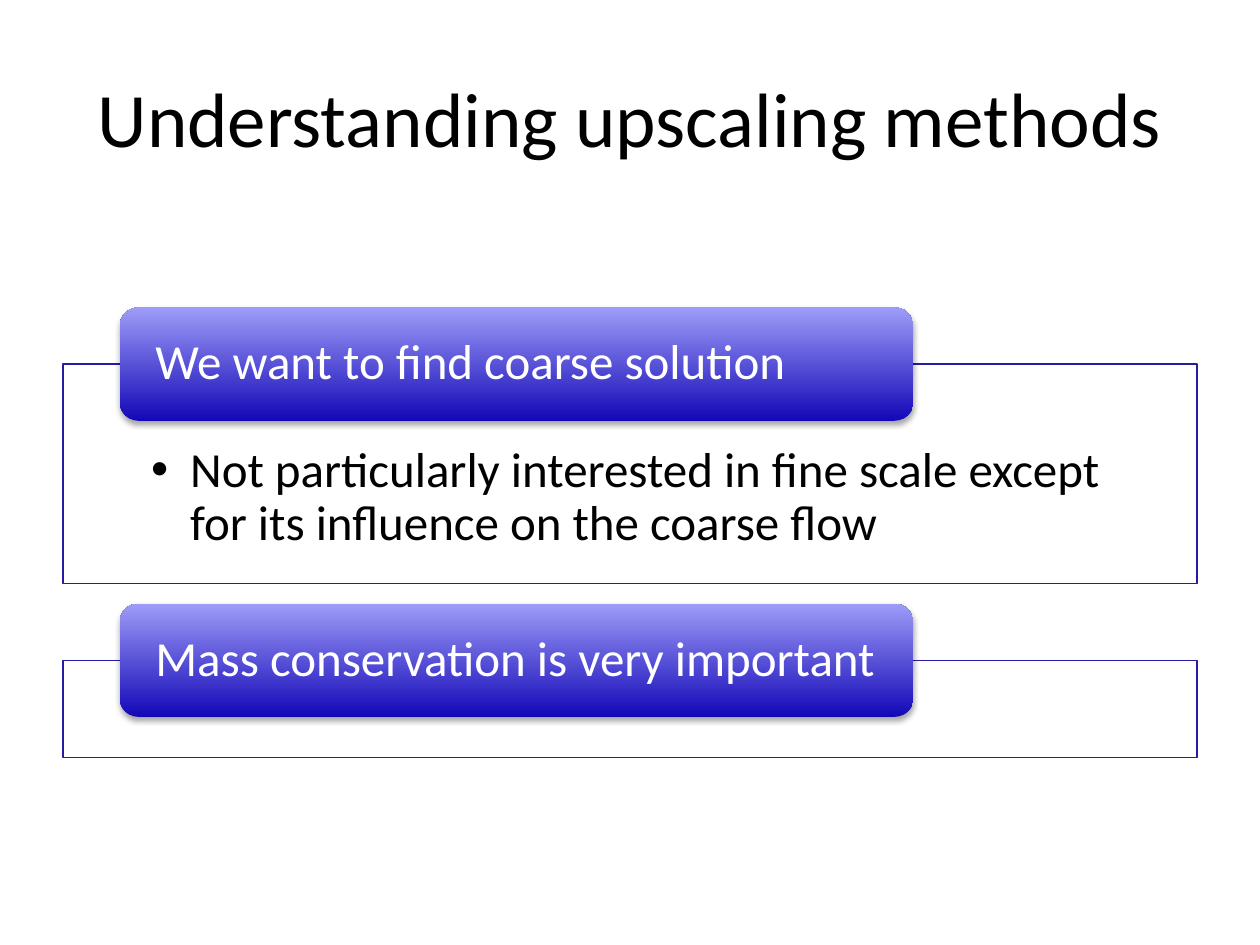
from lxml import etree
from pptx import Presentation
from pptx import util as u
from pptx.dml.color import RGBColor
from pptx.enum import shapes, text
from pptx.oxml import ns

FONT = "Calibri"
BLACK = RGBColor(0x00, 0x00, 0x00)
WHITE = RGBColor(0xFF, 0xFF, 0xFF)
OUTLINE = RGBColor(0x25, 0x1C, 0xA3)
DEEP_BLUE = RGBColor(0x13, 0x08, 0xB7)
PALE_BLUE = RGBColor(0x9E, 0x9C, 0xF8)

PANEL_LEFT, PANEL_WIDTH = 0.5, 9
HEADER_LEFT, HEADER_WIDTH, HEADER_HEIGHT = 0.95, 6.3, 0.9
SECTIONS = [
    (2.89, 1.74, "We want to find coarse solution",
     "Not particularly interested in fine scale except for its influence on the coarse flow"),
    (5.24, 0.77, "Mass conservation is very important", None),
]


def add_child(parent, tag, **attributes):
    return etree.SubElement(parent, ns.qn(tag), attributes)


def write_text(box, words, size=28, color=BLACK, align=text.PP_ALIGN.LEFT,
               anchor=text.MSO_ANCHOR.MIDDLE, insets=(0.1, 0.05, 0.1, 0.05),
               spacing=None, bullet_indent=None):
    frame = box.text_frame
    frame.word_wrap = True
    frame.vertical_anchor = anchor
    sides = ("margin_left", "margin_top", "margin_right", "margin_bottom")
    for side, inset in zip(sides, insets):
        setattr(frame, side, u.Inches(inset))
    para = frame.paragraphs[0]
    para.alignment = align
    if spacing:
        para.line_spacing = spacing
    if bullet_indent:
        properties = para._p.get_or_add_pPr()
        properties.set("marL", str(u.Inches(bullet_indent)))
        properties.set("indent", str(-u.Inches(bullet_indent)))
        add_child(properties, "a:buFont", typeface="Arial")
        add_child(properties, "a:buChar", char="•")
    span = para.add_run()
    span.text = words
    span.font.name = FONT
    span.font.size = u.Pt(size)
    span.font.color.rgb = color


def add_box(page, kind, left, top, width, height):
    box = page.shapes.add_shape(kind, u.Inches(left), u.Inches(top),
                                u.Inches(width), u.Inches(height))
    box.shadow.inherit = False
    return box


def add_title(page, words):
    box = page.shapes.add_textbox(u.Inches(0.5), u.Inches(0.3), u.Inches(9), u.Inches(1.25))
    write_text(box, words, size=44, align=text.PP_ALIGN.CENTER)


def add_panel(page, top, height, words):
    panel = add_box(page, shapes.MSO_SHAPE.RECTANGLE, PANEL_LEFT, top, PANEL_WIDTH, height)
    panel.fill.solid()
    panel.fill.fore_color.rgb = WHITE
    color = panel._element.spPr.find(ns.qn("a:solidFill"))[0]
    add_child(color, "a:alpha", val="90000")
    panel.line.color.rgb = OUTLINE
    panel.line.width = u.Pt(0.75)
    if words:
        write_text(panel, words, anchor=text.MSO_ANCHOR.TOP,
                   insets=(0.7, 0.64, 0.7, 0.22), spacing=0.9, bullet_indent=0.31)


def add_header(page, top, words):
    header = add_box(page, shapes.MSO_SHAPE.ROUNDED_RECTANGLE,
                     HEADER_LEFT, top, HEADER_WIDTH, HEADER_HEIGHT)
    header.fill.gradient()
    header.fill.gradient_angle = 90
    for stop, color, position in zip(header.fill.gradient_stops, (DEEP_BLUE, PALE_BLUE), (0, 1)):
        stop.color.rgb = color
        stop.position = position
    header.line.fill.background()
    effects = header._element.spPr.find(ns.qn("a:effectLst"))
    shadow = add_child(effects, "a:outerShdw", blurRad=str(u.Pt(3.1)), dist=str(u.Pt(1.8)),
                       dir="5400000", rotWithShape="0")
    color = add_child(shadow, "a:srgbClr", val=str(BLACK))
    add_child(color, "a:alpha", val="35000")
    write_text(header, words, color=WHITE, insets=(0.24, 0, 0.24, 0), spacing=0.9)


def main():
    deck = Presentation()
    deck.slide_width, deck.slide_height = u.Inches(10), u.Inches(7.5)
    page = deck.slides.add_slide(deck.slide_layouts[6])
    add_title(page, "Understanding upscaling methods")
    for top, height, heading, detail in SECTIONS:
        add_panel(page, top, height, detail)
        add_header(page, top - HEADER_HEIGHT / 2, heading)
    deck.save("out.pptx")


if __name__ == "__main__":
    main()
